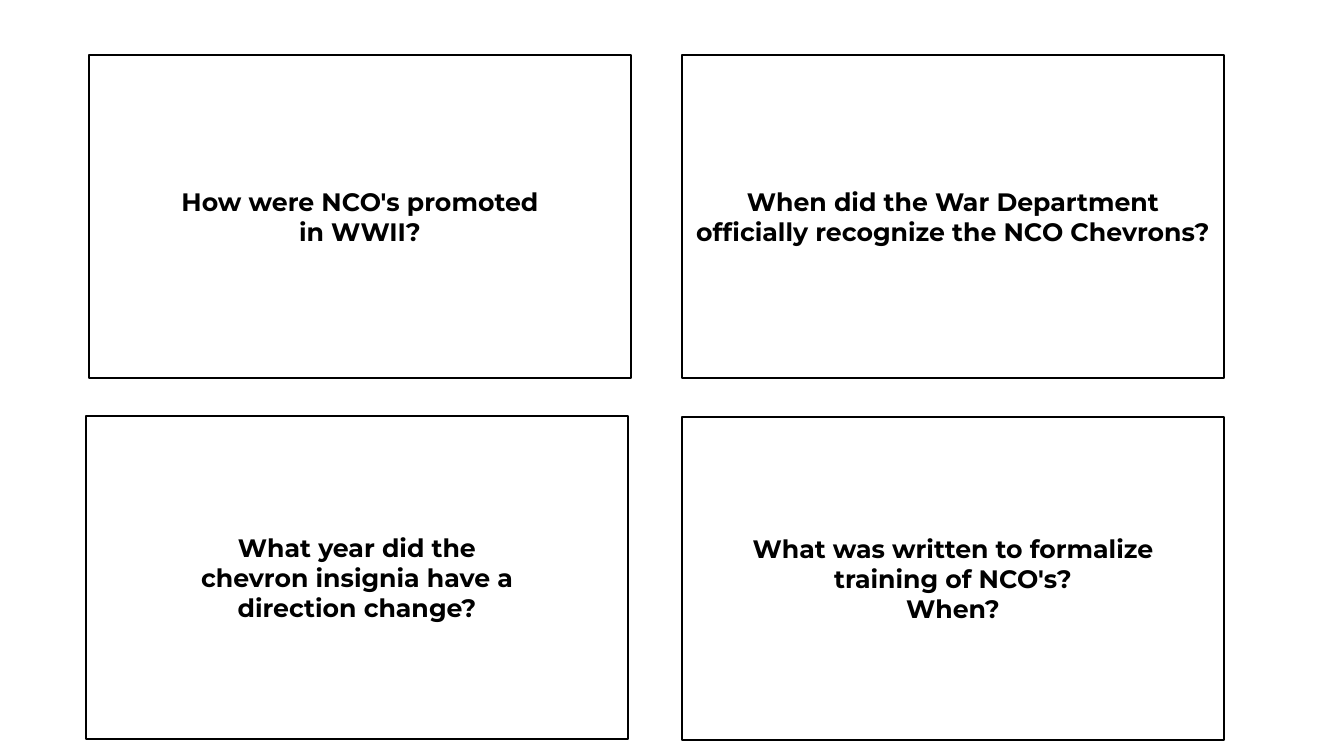
from pptx import Presentation
from pptx.dml.color import RGBColor
from pptx.enum.shapes import MSO_SHAPE
from pptx.enum.text import MSO_ANCHOR, PP_ALIGN
from pptx.util import Emu, Pt

HUES = {"paper": "FFFFFF", "ink": "000000"}
WIDE, HIGH = 542, 323


def px(n):
    return Emu(round(n * 914400 / 100.8))


def hue(name):
    return RGBColor.from_string(HUES[name])


# Slide
deck = Presentation()
deck.slide_width, deck.slide_height = px(1344), px(756)
slide = deck.slides.add_slide(deck.slide_layouts[6])

# Question cards: left, top, lines
cards = [
    (89, 55, ["How were NCO's promoted", "in WWII?"]),
    (682, 55, ["When did the War Department officially recognize the NCO Chevrons?"]),
    (86, 416, ["What year did the", "chevron insignia have a", "direction change?"]),
    (682, 417, ["What was written to formalize", "training of NCO's?", "When?"]),
]

for left, top, lines in cards:
    card = slide.shapes.add_shape(
        MSO_SHAPE.RECTANGLE, px(left), px(top), px(WIDE), px(HIGH))
    card.shadow.inherit = False
    card.fill.solid()
    card.fill.fore_color.rgb = hue("paper")
    card.line.color.rgb = hue("ink")
    card.line.width = Pt(1)

    # Question text
    frame = card.text_frame
    frame.word_wrap = True
    frame.vertical_anchor = MSO_ANCHOR.MIDDLE
    frame.text = "\n".join(lines)
    for para in frame.paragraphs:
        para.alignment = PP_ALIGN.CENTER
        font = para.runs[0].font
        font.name = "Montserrat"
        font.size = Pt(18)
        font.bold = True
        font.color.rgb = hue("ink")

deck.save("out.pptx")
